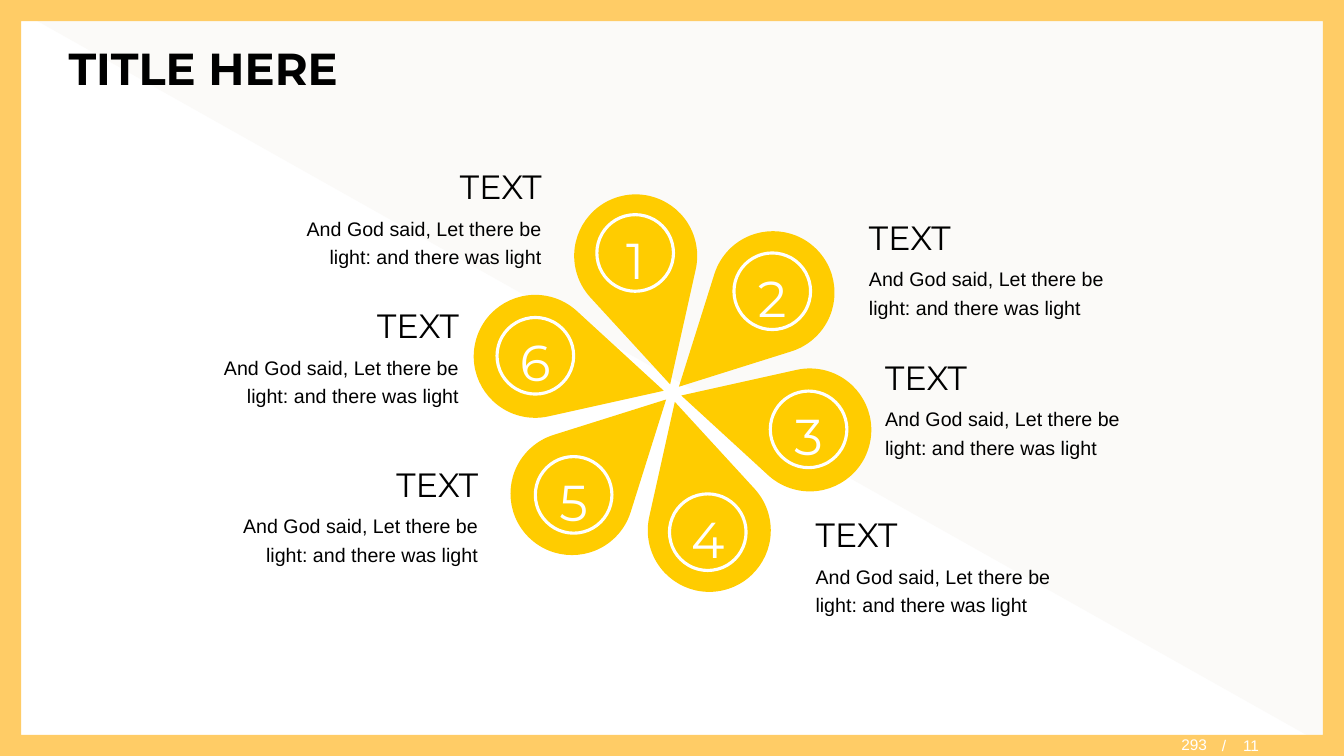
from math import cos, acos, pi, radians, sin, tan

from lxml.etree import SubElement
from pptx import Presentation
from pptx.dml.color import RGBColor
from pptx.enum.shapes import MSO_SHAPE
from pptx.enum.text import MSO_ANCHOR, MSO_AUTO_SIZE, PP_ALIGN
from pptx.oxml.ns import qn
from pptx.util import Inches, Pt

WIDTH, HEIGHT = 13.33, 7.5
HUB_X, HUB_Y = 6.67, 3.9
HEAD_RADIUS, PETAL_LENGTH, HUB_GAP = 0.61, 1.93, 0.09
RING_SIZE = 0.76
VERSE = "And God said, Let there be light: and there was light"

PETAL_ROTATIONS = [105, 285, 45, 225, 345, 165]
# left, top, alignment
LABELS = [
    (2.92, 1.52, PP_ALIGN.RIGHT),
    (2.1, 2.9, PP_ALIGN.RIGHT),
    (2.29, 4.47, PP_ALIGN.RIGHT),
    (8.52, 2.02, PP_ALIGN.LEFT),
    (8.68, 3.41, PP_ALIGN.LEFT),
    (7.99, 4.97, PP_ALIGN.LEFT),
]
# number, left, top
RINGS = [
    (1, 5.92, 2.13),
    (2, 7.28, 2.51),
    (3, 7.64, 3.88),
    (6, 4.93, 3.15),
    (5, 5.31, 4.53),
    (4, 6.64, 4.9),
]


def rgb(value):
    return RGBColor.from_string(value)


class FlowerSlide:
    HEADING_FONT, BODY_FONT = "Montserrat", "Arial"
    BLACK, WHITE, PETAL = "000000", "FFFFFF", "FFCC00"
    FRAME, SHADE = "FFCC66", "FBFAF8"

    def __init__(self, prs):
        self.master = prs.slide_master
        self.s = prs.slides.add_slide(prs.slide_layouts[5])

    def format(self, p, font, size, color, align=PP_ALIGN.LEFT, bold=False):
        p.alignment = align
        for r in p.runs:
            r.font.name, r.font.size, r.font.bold = font, Pt(size), bold
            r.font.color.rgb = rgb(color)

    def space(self, p):
        p.line_spacing = 1.2
        p.space_before = p.space_after = Pt(2)

    def fill(self, sp, color):
        sp.shadow.inherit = False
        sp.fill.solid()
        sp.fill.fore_color.rgb = rgb(color)
        sp.line.fill.background()

    def backdrop(self):
        """Make the shaded triangle and the frame, and move them to the master."""
        box = 0, 0, Inches(WIDTH), Inches(HEIGHT)
        triangle = self.s.shapes.add_shape(MSO_SHAPE.RIGHT_TRIANGLE, *box)
        triangle.rotation = 180
        self.fill(triangle, self.SHADE)
        frame = self.s.shapes.add_shape(MSO_SHAPE.FRAME, *box)
        frame.adjustments[0] = 0.028
        self.fill(frame, self.FRAME)
        for i, sp in enumerate((triangle, frame)):
            sp.element.nvSpPr.cNvPr.set("id", str(100 + i))
            self.master.shapes.element.insert(2 + i, sp.element)

    def title(self, text):
        sp = self.s.shapes.title
        sp.left, sp.top = Inches(0.58), Inches(0.28)
        sp.width, sp.height = Inches(12.18), Inches(0.79)
        tf = sp.text_frame
        tf.text = text
        tf.vertical_anchor = MSO_ANCHOR.MIDDLE
        self.format(tf.paragraphs[0], self.HEADING_FONT, 32, self.BLACK, bold=True)

    def petal(self, rotation):
        """Draw a teardrop with its tip up, then turn it to point at the hub."""
        turn, reach = radians(rotation), HUB_GAP + PETAL_LENGTH / 2
        x = HUB_X - reach * sin(turn)
        y = HUB_Y + reach * cos(turn)
        tip_y = y - PETAL_LENGTH / 2
        head_y = y + PETAL_LENGTH / 2 - HEAD_RADIUS

        def head_point(angle, along=0):
            """Point on the head, moved along the tangent there."""
            return (Inches(x + HEAD_RADIUS * (sin(angle) + along * cos(angle))),
                    Inches(head_y - HEAD_RADIUS * (cos(angle) - along * sin(angle))))

        tangent = acos(HEAD_RADIUS / (head_y - tip_y))
        nodes = [tangent, pi / 2, pi, 3 * pi / 2, 2 * pi - tangent]
        outline = [head_point(tangent)]
        for a, b in zip(nodes, nodes[1:]):
            handle = 4 / 3 * tan((b - a) / 4)
            outline += [head_point(a, handle), head_point(b, -handle), head_point(b)]
        builder = self.s.shapes.build_freeform(Inches(x), Inches(tip_y))
        builder.add_line_segments(outline, close=True)
        sp = builder.convert_to_shape()
        self.curve(sp)
        sp.rotation = rotation
        self.fill(sp, self.PETAL)

    def curve(self, sp):
        """Join each three points after the first line into a Bézier curve."""
        lines = list(sp.element.iter(qn("a:lnTo")))[1:]
        for i in range(0, len(lines), 3):
            bezier = lines[i].makeelement(qn("a:cubicBezTo"))
            lines[i].addprevious(bezier)
            for line in lines[i:i + 3]:
                bezier.append(line[0])
                line.getparent().remove(line)

    def ring(self, number, left, top):
        sp = self.s.shapes.add_shape(MSO_SHAPE.OVAL, Inches(left), Inches(top),
                                     Inches(RING_SIZE), Inches(RING_SIZE))
        sp.shadow.inherit = False
        sp.fill.background()
        sp.line.color.rgb = rgb(self.WHITE)
        sp.line.width = Pt(2.25)
        tf = sp.text_frame
        tf.text = str(number)
        tf.vertical_anchor = MSO_ANCHOR.MIDDLE
        p = tf.paragraphs[0]
        self.format(p, self.HEADING_FONT, 36, self.WHITE, PP_ALIGN.CENTER)
        self.space(p)

    def text_box(self, text, left, top, width, height):
        sp = self.s.shapes.add_textbox(Inches(left), Inches(top),
                                       Inches(width), Inches(height))
        tf = sp.text_frame
        tf.word_wrap = True
        tf.text = text
        return tf

    def label(self, heading, body, left, top, align):
        tf = self.text_box(f"{heading}\n{body}", left, top, 2.55, 1.21)
        tf.auto_size = MSO_AUTO_SIZE.SHAPE_TO_FIT_TEXT
        styles = (self.HEADING_FONT, 24), (self.BODY_FONT, 14)
        for p, (font, size) in zip(tf.paragraphs, styles):
            self.format(p, font, size, self.BLACK, align)
            self.space(p)

    def page_number(self, page, total):
        count = self.text_box(f"/\t{total}", 12.02, 7.3, 1.31, 0.18)
        current = self.text_box(page, 9.48, 7.32, 2.59, 0.18)
        current.margin_top = 0
        for tf, align in ((count, PP_ALIGN.LEFT), (current, PP_ALIGN.RIGHT)):
            tf.vertical_anchor = MSO_ANCHOR.MIDDLE
            self.format(tf.paragraphs[0], self.BODY_FONT, 11, self.WHITE, align)
        tabs = SubElement(count.paragraphs[0]._p.get_or_add_pPr(), qn("a:tabLst"))
        SubElement(tabs, qn("a:tab"), pos=str(Inches(0.21)), algn="l")


def main():
    prs = Presentation()
    prs.slide_width, prs.slide_height = Inches(WIDTH), Inches(HEIGHT)
    flower = FlowerSlide(prs)
    flower.backdrop()
    flower.title("TITLE HERE")
    for rotation in PETAL_ROTATIONS:
        flower.petal(rotation)
    for left, top, align in LABELS:
        flower.label("TEXT", VERSE, left, top, align)
    for number, left, top in RINGS:
        flower.ring(number, left, top)
    flower.page_number("293", "11")
    prs.save("out.pptx")


if __name__ == "__main__":
    main()
